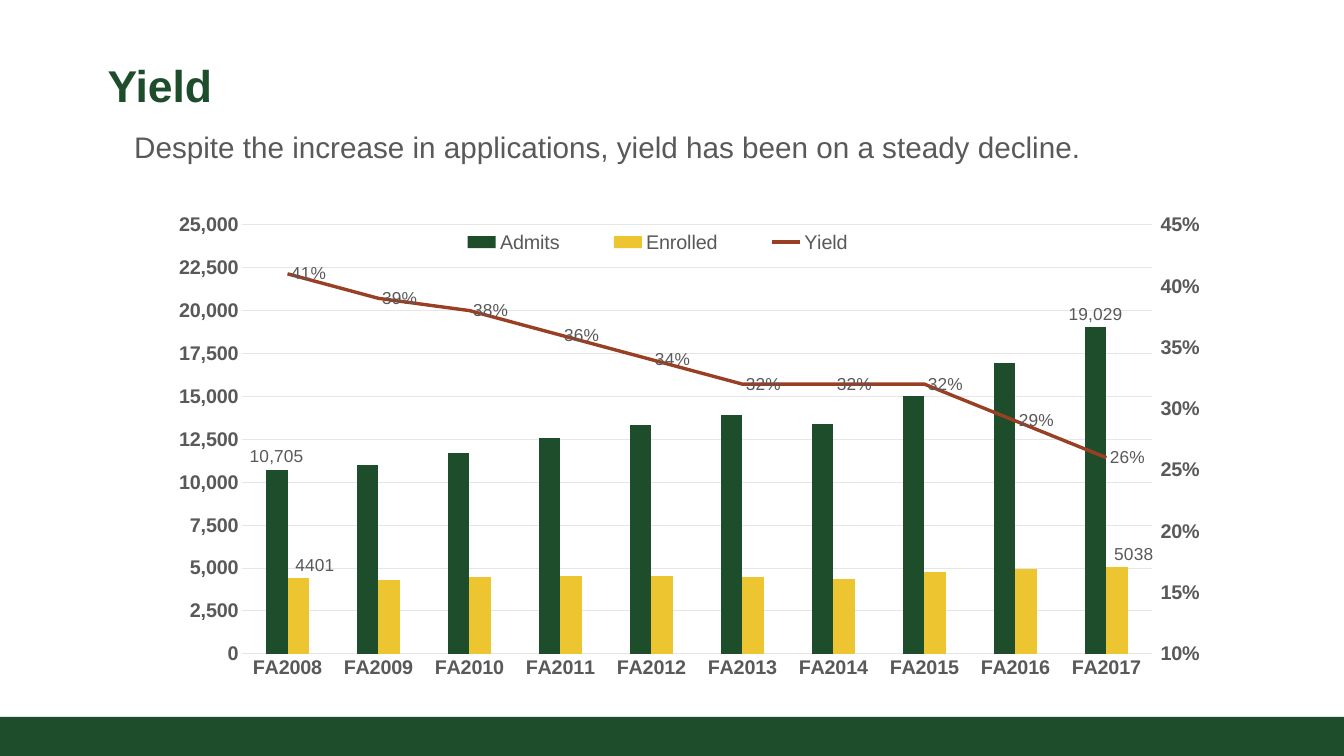
from pptx import Presentation
from pptx.chart.axis import ValueAxis
from pptx.chart.data import CategoryChartData
from pptx.dml.color import RGBColor
from pptx.enum.chart import (XL_CHART_TYPE, XL_LABEL_POSITION, XL_LEGEND_POSITION,
                             XL_MARKER_STYLE, XL_TICK_MARK)
from pptx.enum.shapes import MSO_SHAPE
from pptx.enum.text import MSO_ANCHOR, PP_ALIGN
from pptx.oxml import parse_xml
from pptx.oxml.ns import nsdecls
from pptx.util import Inches, Pt

GREEN = RGBColor(0x1E, 0x4D, 0x2B)
GOLD = RGBColor(0xEC, 0xC5, 0x30)
RUST = RGBColor(0x99, 0x3F, 0x24)
GRAY = RGBColor(0x59, 0x59, 0x5B)
PALE = RGBColor(0xE6, 0xE6, 0xE7)
FONT = "Arial"
COLUMNS = XL_CHART_TYPE.COLUMN_CLUSTERED
ABOVE, BESIDE = XL_LABEL_POSITION.OUTSIDE_END, XL_LABEL_POSITION.RIGHT
NO_TICK, TICK_OUT = XL_TICK_MARK.NONE, XL_TICK_MARK.OUTSIDE

TITLE = "Yield"
MESSAGE = "Despite the increase in applications, yield has been on a steady decline."
TERMS = [f"FA{year}" for year in range(2008, 2018)]
SERIES = [
    ("Admits", "#,##0", [10705, 10977, 11709, 12565, 13351, 13916, 13416, 14997, 16963, 19029]),
    ("Enrolled", "General", [4401, 4285, 4472, 4504, 4544, 4443, 4353, 4737, 4956, 5038]),
    ("Yield", "0%", [0.41, 0.39, 0.38, 0.36, 0.34, 0.32, 0.32, 0.32, 0.29, 0.26]),
]
BAR_STYLES = [(GREEN, 0), (GOLD, 0.015)]
LABELLED_POINTS = (0, len(TERMS) - 1)
PLOT_BOX = (0.099, 0.055, 0.823, 0.833)
LEGEND_BOX = (0.26, 0.055, 0.43, 0.067)

LINE_PLOT = f"""<c:lineChart {nsdecls('c')}><c:grouping val="standard"/>
<c:varyColors val="0"/><c:marker val="1"/><c:axId val="301"/><c:axId val="302"/></c:lineChart>"""
HIDDEN_AXIS = f"""<c:catAx {nsdecls('c')}><c:axId val="301"/>
<c:scaling><c:orientation val="minMax"/></c:scaling><c:delete val="1"/>
<c:axPos val="b"/><c:crossAx val="302"/><c:crosses val="autoZero"/></c:catAx>"""
RIGHT_AXIS = f"""<c:valAx {nsdecls('c')}><c:axId val="302"/>
<c:scaling><c:orientation val="minMax"/></c:scaling><c:delete val="0"/>
<c:axPos val="r"/><c:numFmt formatCode="0%" sourceLinked="0"/>
<c:majorTickMark val="out"/><c:minorTickMark val="none"/><c:tickLblPos val="nextTo"/>
<c:crossAx val="301"/><c:crosses val="max"/><c:crossBetween val="between"/></c:valAx>"""


def set_all(target, values):
    for name, value in values.items():
        setattr(target, name, value)


def style_font(font, size, color=GRAY, bold=False):
    set_all(font, {"name": FONT, "size": Pt(size), "bold": bold})
    font.color.rgb = color


def place(shape, left, top, width, height):
    set_all(shape, {"left": Inches(left), "top": Inches(top),
                    "width": Inches(width), "height": Inches(height)})


def manual_layout(values, modes=""):
    parts = "".join(f'<c:{key} val="{value}"/>' for key, value in zip("xywh", values))
    return parse_xml(f"<c:layout {nsdecls('c')}><c:manualLayout>{modes}{parts}"
                     "</c:manualLayout></c:layout>")


def edge_layout(values, target=""):
    return manual_layout(values, target + '<c:xMode val="edge"/><c:yMode val="edge"/>')


def move_yield_to_line(chart):
    plot_area = chart.element.xpath(".//c:plotArea")[0]
    for layout in plot_area.xpath("./c:layout"):
        plot_area.remove(layout)
    plot_area.insert(0, edge_layout(PLOT_BOX, '<c:layoutTarget val="inner"/>'))
    yield_series = plot_area.xpath("./c:barChart/c:ser")[-1]
    for flag in yield_series.xpath("./c:invertIfNegative"):
        yield_series.remove(flag)
    line_plot = parse_xml(LINE_PLOT)
    line_plot.insert(2, yield_series)
    plot_area.xpath("./c:barChart")[0].addnext(line_plot)
    right_axis = parse_xml(RIGHT_AXIS)
    plot_area.xpath("./c:valAx")[-1].addnext(right_axis)
    right_axis.addnext(parse_xml(HIDDEN_AXIS))
    return ValueAxis(right_axis)


def style_axes(category, left, right):
    set_all(left, {"minimum_scale": 0, "maximum_scale": 25000, "major_unit": 2500})
    set_all(right, {"minimum_scale": 0.1, "maximum_scale": 0.45, "major_unit": 0.05})
    set_all(left.tick_labels, {"number_format": "#,##0", "number_format_is_linked": False})
    for axis, tick in ((category, NO_TICK), (left, NO_TICK), (right, TICK_OUT)):
        set_all(axis, {"major_tick_mark": tick, "minor_tick_mark": NO_TICK})
        style_font(axis.tick_labels.font, 16, bold=True)
        axis.format.line.fill.background()
    for line in (category.format.line, left.major_gridlines.format.line):
        line.color.rgb = PALE
        line.width = Pt(0.75)


def style_series(chart):
    bars, lines = chart.plots
    set_all(bars, {"gap_width": 219, "overlap": 0, "vary_by_categories": False})
    for series, (color, shift) in zip(bars.series, BAR_STYLES):
        series.format.fill.solid()
        series.format.fill.fore_color.rgb = color
        series.data_labels.show_value = False
        for index in LABELLED_POINTS:
            label = series.points[index].data_label
            label.position = ABOVE
            style_font(label.font, 14)
        if shift:
            for label in series.data_labels._element.xpath("./c:dLbl"):
                label.insert(1, manual_layout((shift, 0)))
    trend = lines.series[0]
    trend.smooth = False
    trend.marker.style = XL_MARKER_STYLE.NONE
    trend.format.line.color.rgb = RUST
    trend.format.line.width = Pt(2.75)
    set_all(trend.data_labels, {"show_value": True, "position": BESIDE,
                                "number_format": "0%", "number_format_is_linked": False})
    style_font(trend.data_labels.font, 14)


def add_yield_chart(page):
    data = CategoryChartData()
    data.categories = TERMS
    for name, number_format, values in SERIES:
        data.add_series(name, values, number_format)
    chart = page.shapes.add_chart(COLUMNS, Inches(1.49), Inches(2.21),
                                  Inches(12.43), Inches(5.79), data).chart
    set_all(chart, {"has_title": False, "has_legend": True})
    style_font(chart.font, 10)
    category, left = chart.category_axis, chart.value_axis
    style_axes(category, left, move_yield_to_line(chart))
    style_series(chart)
    set_all(chart.legend, {"position": XL_LEGEND_POSITION.BOTTOM, "include_in_layout": False})
    style_font(chart.legend.font, 16)
    chart.element.xpath(".//c:legendPos")[0].addnext(edge_layout(LEGEND_BOX))


def write_text(box, text, size, color, bold, anchor):
    set_all(box.text_frame, {"text": text, "word_wrap": True, "vertical_anchor": anchor})
    para = box.text_frame.paragraphs[0]
    para.alignment = PP_ALIGN.LEFT
    style_font(para.runs[0].font, size, color, bold)


def main():
    deck = Presentation()
    set_all(deck, {"slide_width": Inches(15.11), "slide_height": Inches(8.5)})
    page = deck.slides.add_slide(deck.slide_layouts[5])

    band = page.shapes.add_shape(MSO_SHAPE.RECTANGLE, 0, Inches(8.06), Inches(15.11), Inches(0.44))
    band.shadow.inherit = False
    band.fill.solid()
    band.fill.fore_color.rgb = GREEN
    band.line.fill.background()

    add_yield_chart(page)

    title = page.shapes.title
    place(title, 1.11, 0.24, 13.03, 1.11)
    write_text(title, TITLE, 36, GREEN, True, MSO_ANCHOR.BOTTOM)
    for side in ("left", "top", "right", "bottom"):
        setattr(title.text_frame, f"margin_{side}", Inches(0.1))

    message = page.shapes.add_textbox(Inches(1.41), Inches(1.4), Inches(13.44), Inches(0.5))
    write_text(message, MESSAGE, 24, GRAY, False, MSO_ANCHOR.TOP)

    deck.save("out.pptx")


if __name__ == "__main__":
    main()
